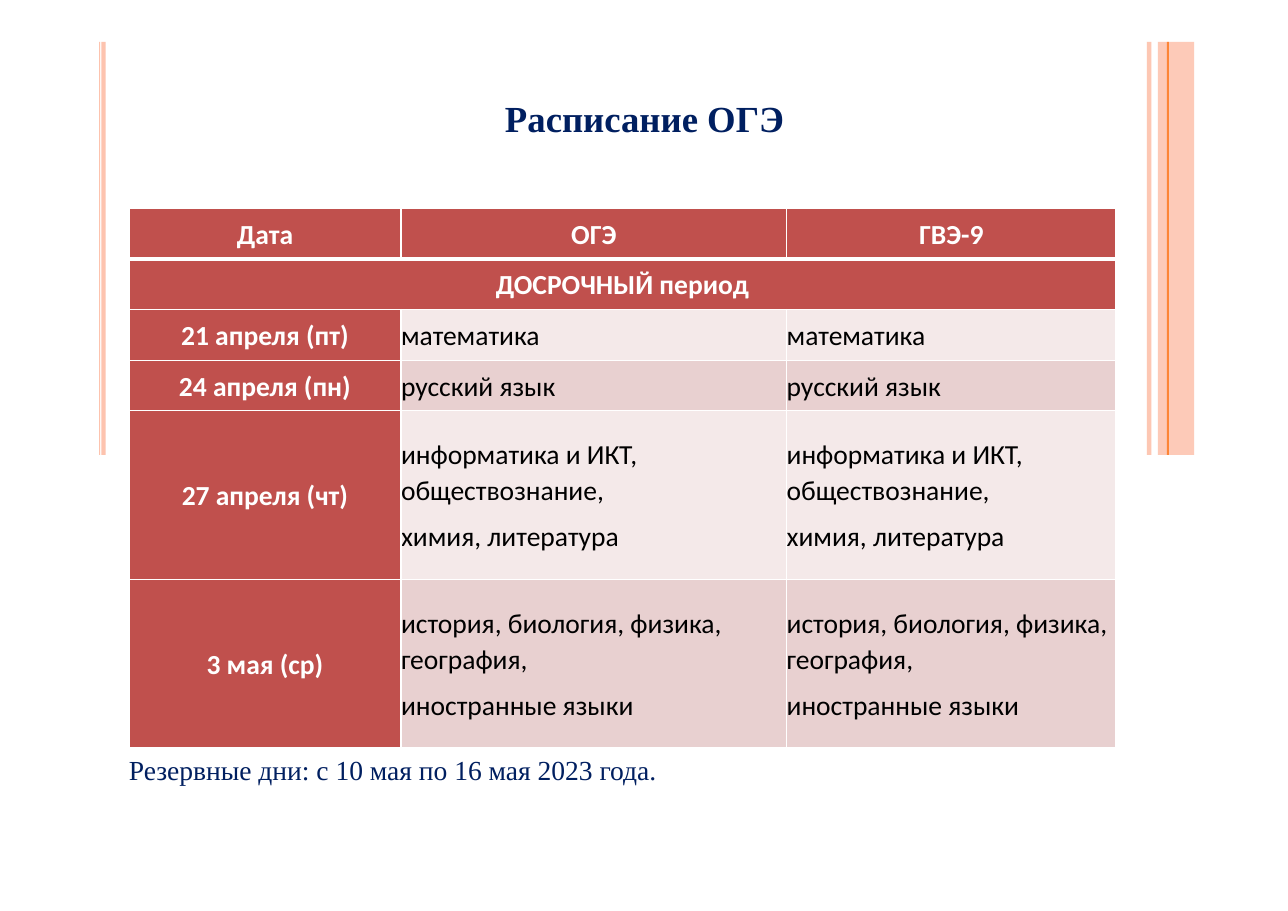
import pptx
import pptx.util
import pptx.dml.color
import pptx.enum.shapes
import pptx.enum.text
import pptx.oxml
import pptx.oxml.ns

PX = 9144  # 100 px to the inch
PAGE_SIZE = (1169, 827)

TITLE = "Расписание ОГЭ"
RESERVE = "Резервные дни: с 10 мая по 16 мая 2023 года."
HEADER = ["Дата", "ОГЭ", "ГВЭ-9"]
PERIOD = "ДОСРОЧНЫЙ период"
EXAMS = [  # date, paragraphs shown in both exam columns
    ("21 апреля (пт)", ["математика"]),
    ("24 апреля (пн)", ["русский язык"]),
    ("27 апреля (чт)", ["информатика и ИКТ, обществознание,", "химия, литература"]),
    ("3 мая (ср)", ["история, биология, физика, география,", "иностранные языки"]),
]

TABLE_LEFT, TABLE_TOP = 117, 189
COLUMN_WIDTHS = [247, 350, 299]
ROW_HEIGHTS = [46, 46, 46, 46, 153, 153]

NAVY, WHITE, BLACK = "001F60", "FFFFFF", "000000"
RED, BANDS = "C0504D", ["F4E9E9", "E8D0D0"]
PEACH, ORANGE = "FDC3AE", "FD8536"
STRIPE_TOP, STRIPE_HEIGHT = 38, 375
STRIPES = [  # left, width, colour, opacity in percent
    (1041, 4, PEACH, 93),
    (90, 1, PEACH, 100),
    (92, 4, PEACH, 100),
    (1051, 33, PEACH, 87),
    (1059, 2, ORANGE, 100),
]

ALIGN = pptx.enum.text.PP_ALIGN


def px(*lengths):
    return [pptx.util.Emu(length * PX) for length in lengths]


def paint(fill, colour):
    fill.solid()
    fill.fore_color.rgb = pptx.dml.color.RGBColor.from_string(colour)


def add_span(para, text, font, size, colour, bold):
    span = para.add_run()
    span.text = text
    span.font.name = font
    span.font.size = pptx.util.Pt(size)
    span.font.bold = bold
    paint(span.font.fill, colour)


def clear_margins(holder):
    holder.margin_left = holder.margin_top = 0
    holder.margin_right = holder.margin_bottom = 0


def add_stripe(page, left, width, colour, opacity):
    stripe = page.shapes.add_shape(
        pptx.enum.shapes.MSO_SHAPE.RECTANGLE,
        *px(left, STRIPE_TOP, width, STRIPE_HEIGHT))
    stripe.shadow.inherit = False
    stripe.line.fill.background()
    paint(stripe.fill, colour)
    if opacity < 100:
        tint = stripe.fill._xPr.find(".//" + pptx.oxml.ns.qn("a:srgbClr"))
        tint.append(pptx.oxml.parse_xml(
            f'<a:alpha {pptx.oxml.ns.nsdecls("a")} val="{opacity * 1000}"/>'))


def add_text(page, place, text, size, bold, align):
    box = page.shapes.add_textbox(*px(*place))
    frame = box.text_frame
    frame.word_wrap = True
    clear_margins(frame)
    para = frame.paragraphs[0]
    para.alignment = align
    add_span(para, text, "Times New Roman", size, NAVY, bold)


def add_borders(cell, **points):
    """Draw white borders; points gives a width for each side L, R, T, B."""
    for side, width in points.items():
        cell._tc.get_or_add_tcPr().append(pptx.oxml.parse_xml(
            f'<a:ln{side} {pptx.oxml.ns.nsdecls("a")} w="{width * 12700}">'
            f'<a:solidFill><a:srgbClr val="{WHITE}"/></a:solidFill></a:ln{side}>'))


def fill_cell(cell, lines, fill, colour, bold, align):
    paint(cell.fill, fill)
    clear_margins(cell)
    cell.vertical_anchor = pptx.enum.text.MSO_ANCHOR.MIDDLE
    frame = cell.text_frame
    for index, line in enumerate(lines):
        para = frame.add_paragraph() if index else frame.paragraphs[0]
        para.alignment = align
        para.line_spacing = 1.07
        para.space_after = pptx.util.Pt(6.8)
        add_span(para, line, "Calibri", 18, colour, bold)


def add_schedule(page):
    rows = [[[name] for name in HEADER], [[PERIOD], [], []]]
    rows += [[[date], subjects, subjects] for date, subjects in EXAMS]
    table = page.shapes.add_table(
        len(rows), len(HEADER),
        *px(TABLE_LEFT, TABLE_TOP, sum(COLUMN_WIDTHS), sum(ROW_HEIGHTS))).table
    for column, width in zip(table.columns, px(*COLUMN_WIDTHS)):
        column.width = width
    for row, height in zip(table.rows, px(*ROW_HEIGHTS)):
        row.height = height
    table.cell(1, 0).merge(table.cell(1, 2))
    for r, row in enumerate(rows):
        for c, lines in enumerate(row):
            cell = table.cell(r, c)
            add_borders(cell, L=1, R=1, T=3 if r == 1 else 1, B=3 if r == 0 else 1)
            if r < 2 or c == 0:
                fill_cell(cell, lines, RED, WHITE, True, ALIGN.CENTER)
            else:
                fill_cell(cell, lines, BANDS[r % 2], BLACK, False, ALIGN.LEFT)


def main():
    deck = pptx.Presentation()
    deck.slide_width, deck.slide_height = px(*PAGE_SIZE)
    page = deck.slides.add_slide(deck.slide_layouts[6])
    for stripe in STRIPES:
        add_stripe(page, *stripe)
    add_text(page, (259, 87, 652, 40), TITLE, 24, True, ALIGN.CENTER)
    add_text(page, (TABLE_LEFT, 684, 943, 34), RESERVE, 18, False, ALIGN.LEFT)
    add_schedule(page)
    deck.save("out.pptx")


if __name__ == "__main__":
    main()
